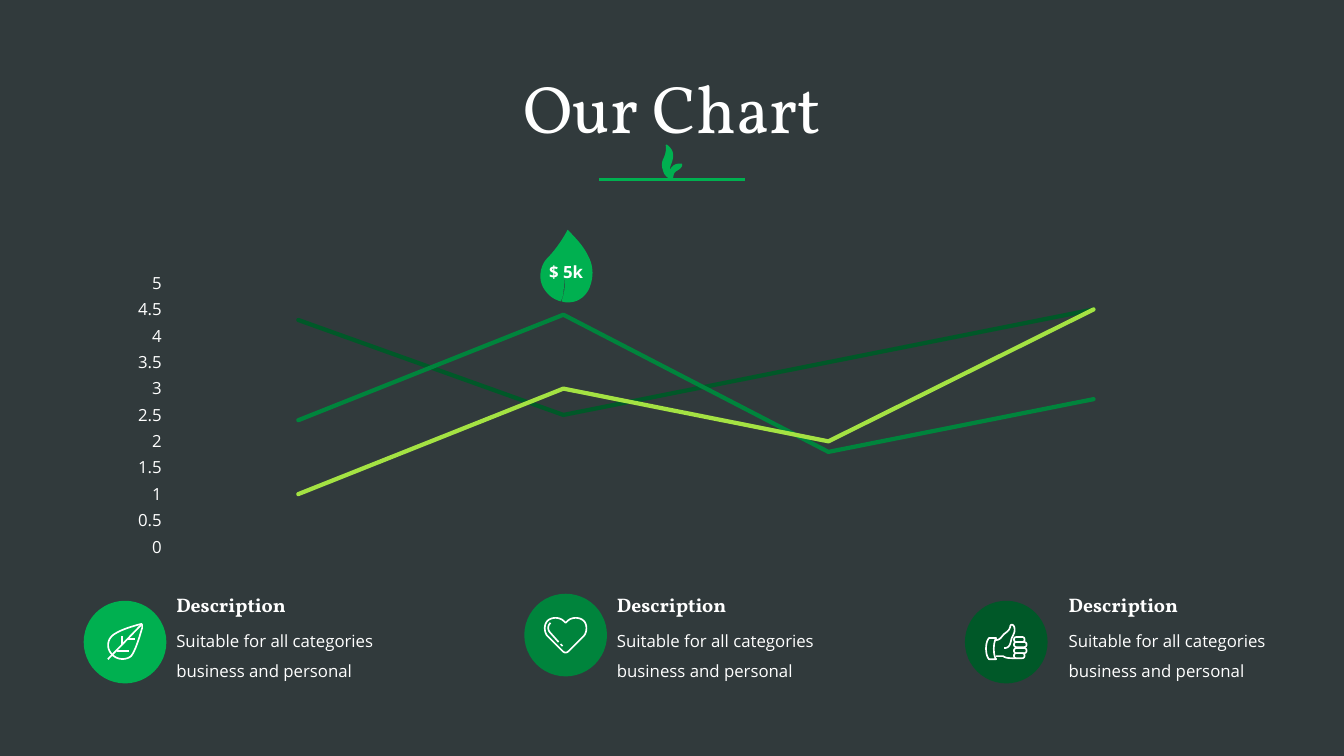
from lxml import etree
from pptx import Presentation
from pptx.chart.data import CategoryChartData
from pptx.dml.color import RGBColor
from pptx.enum.chart import XL_CHART_TYPE as ChartType, XL_TICK_MARK as Tick
from pptx.enum.shapes import MSO_CONNECTOR as Connector, MSO_SHAPE as Shape
from pptx.enum.text import MSO_ANCHOR as Anchor, PP_ALIGN as Align
from pptx.oxml import parse_xml
from pptx.oxml.ns import nsdecls, qn
from pptx.util import Inches, Pt

BACKDROP = RGBColor(0x31, 0x31, 0x31)
SLATE = RGBColor(0x31, 0x3C, 0x3F)
WHITE = RGBColor(0xFF, 0xFF, 0xFF)
GREEN = RGBColor(0x00, 0xB0, 0x50)
MID_GREEN = RGBColor(0x00, 0x84, 0x3C)
DARK_GREEN = RGBColor(0x00, 0x58, 0x28)
LIME = RGBColor(0xA4, 0xE2, 0x43)
SANS = "Open Sans"
SERIF = "Vollkorn"

SERIES = [
    ("Series 1", (4.3, 2.5, 3.5, 4.5), DARK_GREEN),
    ("Series 2", (2.4, 4.4, 1.8, 2.8), MID_GREEN),
    ("Series 3", (1, 3, 2, 4.5), LIME),
]
PLOT = {"x": 0.052, "y": 0.266, "w": 0.921, "h": 0.711}

SPROUT = [
    [(6.74, 1.63), (6.76, 1.63), (6.76, 1.66, 6.74, 1.67, 6.71, 1.69),
     (6.69, 1.7, 6.67, 1.72, 6.67, 1.78), (6.65, 1.76, 6.65, 1.73, 6.65, 1.69),
     (6.67, 1.65, 6.7, 1.63, 6.74, 1.63)],
    [(6.61, 1.44), (6.65, 1.47, 6.67, 1.5, 6.67, 1.54),
     (6.67, 1.58, 6.66, 1.6, 6.65, 1.63), (6.63, 1.68, 6.63, 1.73, 6.67, 1.78),
     (6.62, 1.76, 6.59, 1.73, 6.58, 1.68), (6.57, 1.65, 6.57, 1.62, 6.58, 1.59),
     (6.6, 1.55, 6.62, 1.5, 6.61, 1.44)],
]
PIN = [
    [(5.36, 2.74), (5.36, 2.68, 5.38, 2.61, 5.43, 2.56),
     (5.51, 2.48, 5.59, 2.36, 5.63, 2.28), (5.7, 2.35, 5.79, 2.44, 5.84, 2.55),
     (5.88, 2.63, 5.89, 2.72, 5.86, 2.82), (5.83, 2.93, 5.74, 3, 5.64, 3),
     (5.62, 3, 5.6, 3, 5.57, 2.99), (5.6, 2.9, 5.61, 2.85, 5.59, 2.72),
     (5.59, 2.72, 5.61, 2.92, 5.56, 2.99), (5.5, 2.97, 5.47, 2.95, 5.44, 2.92),
     (5.39, 2.87, 5.36, 2.81, 5.36, 2.74)],
]
LEAF = [
    [(1.4, 6.19), (1.36, 6.2, 1.17, 6.25, 1.11, 6.31),
     (1.06, 6.36, 1.06, 6.44, 1.11, 6.49), (1.16, 6.55, 1.25, 6.55, 1.3, 6.51),
     (1.35, 6.45, 1.4, 6.26, 1.41, 6.23), (1.41, 6.2, 1.41, 6.19, 1.4, 6.19)],
    [(1.07, 6.54), (1.4, 6.2)],
    [(1.21, 6.31), (1.21, 6.39)],
    [(1.16, 6.46), (1.28, 6.46)],
    [(1.27, 6.34), (1.34, 6.34)],
]
HEART = [
    [(5.61, 6.18), (5.59, 6.16), (5.55, 6.12, 5.47, 6.12, 5.43, 6.16),
     (5.39, 6.2, 5.4, 6.28, 5.43, 6.31), (5.58, 6.46),
     (5.6, 6.48, 5.62, 6.48, 5.64, 6.46), (5.79, 6.31),
     (5.82, 6.28, 5.83, 6.2, 5.79, 6.16), (5.75, 6.12, 5.67, 6.12, 5.63, 6.16),
     (5.61, 6.18)],
    [(5.46, 6.18), (5.43, 6.21, 5.43, 6.25, 5.46, 6.28), (5.54, 6.37)],
    [(5.56, 6.39), (5.58, 6.41)],
]
FINGERS = [
    [(10.08, y), (right, y), (right + 0.03, y, right + 0.03, y + 0.05, right, y + 0.05),
     (10.08, y + 0.05), (10.05, y + 0.05, 10.05, y, 10.08, y)]
    for y, right in ((6.32, 10.14), (6.37, 10.16), (6.43, 10.16), (6.48, 10.14))
]
THUMB = FINGERS + [
    [(9.88, 6.33), (9.81, 6.33), (9.77, 6.37, 9.77, 6.5, 9.81, 6.54),
     (9.88, 6.54), (9.85, 6.5, 9.85, 6.38, 9.88, 6.33)],
    [(9.88, 6.35), (9.92, 6.35, 9.93, 6.32, 9.96, 6.29),
     (10, 6.26, 10.01, 6.25, 10.02, 6.22), (10.02, 6.19, 10.05, 6.19, 10.06, 6.22),
     (10.07, 6.26, 10.06, 6.28, 10.04, 6.32), (10.02, 6.36, 10.03, 6.43, 9.96, 6.43)],
    [(9.88, 6.51), (9.95, 6.51), (9.98, 6.53, 10, 6.53, 10.08, 6.53)],
]
ITEMS = [
    (0.83, 5.96, GREEN, LEAF, 1.65),
    (5.2, 5.89, MID_GREEN, HEART, 6.02),
    (9.57, 5.96, DARK_GREEN, THUMB, 10.5),
]


def add_solid(s, kind, x, y, w, h, color):
    sp = s.shapes.add_shape(kind, Inches(x), Inches(y), Inches(w), Inches(h))
    sp.shadow.inherit = False
    sp.fill.solid()
    sp.fill.fore_color.rgb = color
    sp.line.fill.background()
    return sp


def add_text(s, text, x, y, w, h, size, font, bold=False, align=Align.LEFT, spacing=1.0):
    tf = s.shapes.add_textbox(Inches(x), Inches(y), Inches(w), Inches(h)).text_frame
    tf.word_wrap = True
    tf.vertical_anchor = Anchor.MIDDLE
    p = tf.paragraphs[0]
    p.text = text
    p.alignment = align
    p.line_spacing = spacing
    p.font.size = Pt(size)
    p.font.name = font
    p.font.bold = bold
    p.font.color.rgb = WHITE


def flatten(contour, steps=10):
    points = [contour[0]]
    for segment in contour[1:]:
        if len(segment) == 2:
            points.append(segment)
            continue
        controls = [points[-1], segment[:2], segment[2:4], segment[4:]]
        for i in range(1, steps + 1):
            t = i / steps
            weights = ((1 - t) ** 3, 3 * t * (1 - t) ** 2, 3 * t * t * (1 - t), t ** 3)
            points.append(tuple(sum(k * c[axis] for k, c in zip(weights, controls))
                                for axis in (0, 1)))
    return [(Inches(x), Inches(y)) for x, y in points]


def add_outline(s, contours, fill=None, line=None, width=1.2):
    builder = s.shapes.build_freeform(*flatten(contours[0])[0], scale=1.0)
    for i, contour in enumerate(contours):
        points = flatten(contour)
        if i:
            builder.move_to(*points[0])
        builder.add_line_segments(points[1:], close=contour[0] == contour[-1][-2:])
    sp = builder.convert_to_shape()
    sp.shadow.inherit = False
    for part, color in ((sp.fill, fill), (sp.line.fill, line)):
        if color is None:
            part.background()
        else:
            part.solid()
            part.fore_color.rgb = color
    if line is not None:
        sp.line.width = Pt(width)


def add_rule(s, x1, x2, y):
    rule = s.shapes.add_connector(Connector.STRAIGHT, Inches(x1), Inches(y), Inches(x2), Inches(y))
    rule.line.color.rgb = GREEN
    rule.line.width = Pt(1.75)
    etree.SubElement(rule._element.spPr, qn("a:effectLst"))


def add_line_chart(s):
    data = CategoryChartData()
    data.categories = ["1", "2", "3", "4"]
    for name, values, _ in SERIES:
        data.add_series(name, values)
    chart = s.shapes.add_chart(ChartType.LINE, Inches(1.05), Inches(1.83),
                               Inches(11.42), Inches(3.71), data).chart
    chart.has_legend = False
    chart.has_title = False
    chart.font.name = SANS
    chart.font.size = Pt(12)
    chart.font.color.rgb = WHITE
    chart.category_axis.visible = False
    axis = chart.value_axis
    axis.minimum_scale, axis.maximum_scale, axis.major_unit = 0, 5, 0.5
    axis.has_major_gridlines = False
    axis.major_tick_mark = axis.minor_tick_mark = Tick.NONE
    axis.format.line.fill.background()
    axis.tick_labels.number_format = "General"
    axis.tick_labels.number_format_is_linked = False
    plot = chart.plots[0]
    plot.vary_by_categories = False
    for series, (_, _, color) in zip(plot.series, SERIES):
        series.smooth = False
        series.format.line.color.rgb = color
        series.format.line.width = Pt(3)
        series.format.line._ln.set("cap", "rnd")
    area = chart._chartSpace.chart.plotArea
    for old in area.findall(qn("c:layout")):
        area.remove(old)
    modes = '<c:xMode val="edge"/><c:yMode val="edge"/>'
    sizes = "".join(f'<c:{key} val="{value}"/>' for key, value in PLOT.items())
    area.insert(0, parse_xml(
        f'<c:layout {nsdecls("c")}><c:manualLayout><c:layoutTarget val="inner"/>'
        f'{modes}{sizes}</c:manualLayout></c:layout>'))


def add_item(s, x, y, color, icon, text_x):
    add_solid(s, Shape.OVAL, x, y, 0.82, 0.82, color)
    add_outline(s, icon, line=WHITE)
    add_text(s, "Description", text_x, 5.83, 2.22, 0.34, 14, SERIF, bold=True)
    add_text(s, "Suitable for all categories business and personal",
             text_x, 6.12, 2.81, 0.67, 12, SANS, spacing=1.5)


def main():
    prs = Presentation()
    prs.slide_width, prs.slide_height = Inches(13.33), Inches(7.5)
    s = prs.slides.add_slide(prs.slide_layouts[6])
    s.background.fill.solid()
    s.background.fill.fore_color.rgb = BACKDROP
    veil = add_solid(s, Shape.RECTANGLE, 0, 0, 13.33, 7.5, SLATE)
    tint = veil._element.spPr.find(qn("a:solidFill"))[0]
    etree.SubElement(tint, qn("a:alpha")).set("val", "85000")
    add_line_chart(s)
    add_text(s, "Our Chart", 1.67, 0.61, 10, 1, 48, SERIF, align=Align.CENTER, spacing=0.9)
    add_outline(s, SPROUT, fill=GREEN, line=GREEN, width=1)
    add_rule(s, 5.94, 7.39, 1.78)
    for item in ITEMS:
        add_item(s, *item)
    add_outline(s, PIN, fill=GREEN)
    add_text(s, "$ 5k", 4.95, 2.55, 1.33, 0.3, 12, SANS, bold=True, align=Align.CENTER)
    prs.save("out.pptx")


if __name__ == "__main__":
    main()
